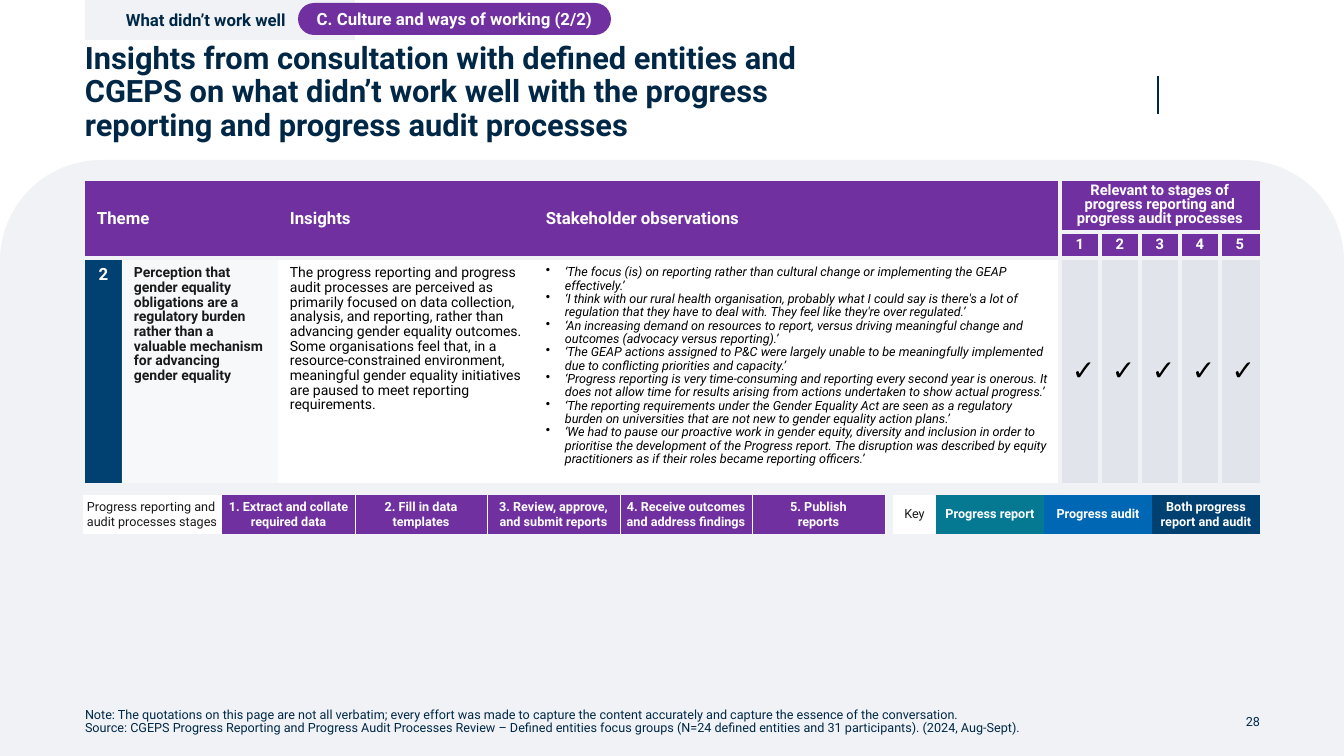
from lxml import etree
from pptx import Presentation
from pptx.dml.color import RGBColor
from pptx.enum.shapes import MSO_CONNECTOR, MSO_SHAPE
from pptx.enum.text import MSO_ANCHOR, PP_ALIGN
from pptx.oxml.ns import qn
from pptx.util import Pt

SCALE = 914400 / 100.8
LEFT, CENTER, RIGHT = PP_ALIGN.LEFT, PP_ALIGN.CENTER, PP_ALIGN.RIGHT
TOP, MIDDLE = MSO_ANCHOR.TOP, MSO_ANCHOR.MIDDLE
RECTANGLE, PILL = MSO_SHAPE.RECTANGLE, MSO_SHAPE.ROUNDED_RECTANGLE
ROUND_TOP = MSO_SHAPE.ROUND_2_SAME_RECTANGLE
STRAIGHT = MSO_CONNECTOR.STRAIGHT

WHITE = RGBColor(0xFF, 0xFF, 0xFF)
BLACK = RGBColor(0x00, 0x00, 0x00)
INK = RGBColor(0x1A, 0x1A, 0x1A)
NAVY = RGBColor(0x00, 0x28, 0x46)
DEEP_BLUE = RGBColor(0x00, 0x41, 0x72)
BLUE = RGBColor(0x00, 0x67, 0xB4)
TEAL = RGBColor(0x05, 0x79, 0x92)
PURPLE = RGBColor(0x70, 0x30, 0xA0)
PALE = RGBColor(0xF0, 0xF2, 0xF5)
GREY = RGBColor(0xE1, 0xE5, 0xEB)
PLAIN_TABLE = "{2D5ABB26-0587-4C30-8999-92F81FD0307C}"

THEME = ("Perception that gender equality obligations are a regulatory burden "
         "rather than a valuable mechanism for advancing gender equality")
INSIGHT = (
    "The progress reporting and progress audit processes are perceived as primarily focused on "
    "data collection, analysis, and reporting, rather than advancing gender equality outcomes. "
    "Some organisations feel that, in a resource-constrained environment, meaningful gender "
    "equality initiatives are paused to meet reporting requirements.")
OBSERVATIONS = [
    "‘The focus (is) on reporting rather than cultural change or implementing the GEAP effectively.’",
    "‘I think with our rural health organisation, probably what I could say is there's a lot of "
    "regulation that they have to deal with. They feel like they're over regulated.’",
    "‘An increasing demand on resources to report, versus driving meaningful change and outcomes "
    "(advocacy versus reporting).’",
    "‘The GEAP actions assigned to P&C were largely unable to be meaningfully implemented due to "
    "conflicting priorities and capacity.’",
    "‘Progress reporting is very time-consuming and reporting every second year is onerous. It does "
    "not allow time for results arising from actions undertaken to show actual progress.’",
    "‘The reporting requirements under the Gender Equality Act are seen as a regulatory burden on "
    "universities that are not new to gender equality action plans.’",
    "‘We had to pause our proactive work in gender equity, diversity and inclusion in order to "
    "prioritise the development of the Progress report. The disruption was described by equity "
    "practitioners as if their roles became reporting officers.’",
]
STAGES = [["1. Extract and collate required data"], ["2. Fill in data", "templates"],
          ["3. Review, approve, and submit reports"],
          ["4. Receive outcomes and address findings"], ["5. Publish", "reports"]]
KEY = [("Progress report", TEAL), ("Progress audit", BLUE),
       ("Both progress report and audit", DEEP_BLUE)]
NOTES = [
    "Note: The quotations on this page are not all verbatim; every effort was made to capture the "
    "content accurately and capture the essence of the conversation.",
    "Source: CGEPS Progress Reporting and Progress Audit Processes Review – Defined entities focus "
    "groups (N=24 defined entities and 31 participants). (2024, Aug-Sept).",
]


def px(value):
    return round(value * SCALE)


def apply(target, values):
    for name, value in values.items():
        setattr(target, name, value)


def insets(side, end):
    return dict(margin_left=px(side), margin_right=px(side),
                margin_top=px(end), margin_bottom=px(end))


def write(frame, lines, size, color, bold=False, italic=False, align=LEFT,
          spacing=1.0, indent=0, bullet=False):
    for index, line in enumerate(lines):
        para = frame.paragraphs[0] if index == 0 else frame.add_paragraph()
        apply(para, dict(alignment=align, line_spacing=spacing, space_before=Pt(0)))
        if indent:
            properties = para._p.get_or_add_pPr()
            properties.set("marL", str(px(indent)))
            if bullet:
                properties.set("indent", str(-px(indent)))
                etree.SubElement(properties, qn("a:buChar")).set("char", "•")
        span = para.add_run()
        span.text = line
        apply(span.font, dict(name="Roboto", size=Pt(size), bold=bold, italic=italic))
        span.font.color.rgb = color


def add_text(page, box, lines, **style):
    frame = page.shapes.add_textbox(*map(px, box)).text_frame
    apply(frame, dict(word_wrap=True, vertical_anchor=MIDDLE, **insets(0, 0)))
    write(frame, lines, **style)


def add_panel(page, kind, box, fill):
    panel = page.shapes.add_shape(kind, *map(px, box))
    panel.shadow.inherit = False
    panel.fill.solid()
    panel.fill.fore_color.rgb = fill
    panel.line.fill.background()
    apply(panel.text_frame, dict(word_wrap=True, vertical_anchor=MIDDLE))
    return panel


def add_grid(page, left, top, widths, heights):
    frame = page.shapes.add_table(len(heights), len(widths), px(left), px(top),
                                  px(sum(widths)), px(sum(heights)))
    table = frame.table
    apply(table, dict(first_row=False, horz_banding=False))
    table._tbl.tblPr.find(qn("a:tableStyleId")).text = PLAIN_TABLE
    for column, width in zip(table.columns, widths):
        column.width = px(width)
    for row, height in zip(table.rows, heights):
        row.height = px(height)
    return table


def fill_cell(cell, lines, fill, margins, borders="", border=(PALE, 3), anchor=MIDDLE,
              alpha=None, **style):
    apply(cell, dict(vertical_anchor=anchor, **insets(*margins)))
    color, width = border
    properties = cell._tc.get_or_add_tcPr()
    for side in "LRTB":
        if side in borders:
            line = etree.SubElement(properties, qn(f"a:ln{side}"), w=str(Pt(width)))
            solid = etree.SubElement(line, qn("a:solidFill"))
            etree.SubElement(solid, qn("a:srgbClr"), val=str(color))
    cell.fill.solid()
    cell.fill.fore_color.rgb = fill
    if alpha:
        tint = properties.find(qn("a:solidFill")).find(qn("a:srgbClr"))
        etree.SubElement(tint, qn("a:alpha"), val=str(alpha * 1000))
    write(cell.text_frame, lines, **style)


def add_backdrop(page, width, height):
    panel = add_panel(page, ROUND_TOP, (0, 160, width, height - 160), PALE)
    panel.adjustments[0] = 0.17
    divider = page.shapes.add_connector(STRAIGHT, px(1158), px(76), px(1158), px(114))
    divider.line.color.rgb = NAVY
    divider.line.width = Pt(1.5)
    etree.SubElement(divider._element.spPr, qn("a:effectLst"))


def add_heading(page, left, top):
    add_text(page, (left, top + 49, 793, 88),
             ["Insights from consultation with defined entities and CGEPS on what didn’t work "
              "well with the progress reporting and progress audit processes"],
             size=22, color=NAVY, bold=True, spacing=0.9)
    tab = add_panel(page, RECTANGLE, (left, top, 270, 40), PALE)
    write(tab.text_frame, ["What didn’t work well"], size=12, color=NAVY, bold=True, indent=31)
    pill = add_panel(page, PILL, (left + 213, top + 3, 313, 32), PURPLE)
    pill.adjustments[0] = 0.5
    write(pill.text_frame, ["C. Culture and ways of working (2/2)"], size=12, color=WHITE,
          bold=True, align=CENTER)


def add_insights(page, left, top):
    table = add_grid(page, left, top, [37, 156, 256, 526] + [40] * 5, [51, 25, 227])
    header = dict(fill=PURPLE, margins=(12, 4), color=WHITE, bold=True)
    for column, last, label, borders in ((0, 1, "Theme", "B"), (2, 2, "Insights", "B"),
                                         (3, 3, "Stakeholder observations", "RB")):
        table.cell(0, column).merge(table.cell(1, last))
        fill_cell(table.cell(0, column), [label], borders=borders, size=12, spacing=0.9, **header)
    table.cell(0, 4).merge(table.cell(0, 8))
    fill_cell(table.cell(0, 4),
              ["Relevant to stages of progress reporting and progress audit processes"],
              borders="LB", size=10.5, align=CENTER, spacing=Pt(10), **header)

    body = dict(margins=(12, 8), spacing=0.9)
    upper = dict(anchor=TOP, borders="TB", **body)
    fill_cell(table.cell(2, 0), ["2"], DEEP_BLUE, size=12, color=WHITE, bold=True,
              align=CENTER, **upper)
    fill_cell(table.cell(2, 1), [THEME], WHITE, alpha=50, size=10, color=INK, bold=True, **upper)
    fill_cell(table.cell(2, 2), [INSIGHT], WHITE, size=10, color=BLACK, **upper)
    fill_cell(table.cell(2, 3), OBSERVATIONS, WHITE, size=9, color=BLACK, italic=True,
              indent=19, bullet=True, **{**upper, "borders": "RTB"})
    for stage in range(1, 6):
        borders = "LTB" if stage == 5 else "LRTB"
        fill_cell(table.cell(1, 3 + stage), [str(stage)], borders=borders, size=10.5,
                  align=CENTER, spacing=0.9, **header)
        fill_cell(table.cell(2, 3 + stage), ["✓"], GREY, borders=borders, size=20,
                  color=BLACK, italic=True, align=CENTER, **body)


def add_legends(page, left, top):
    plain = dict(fill=WHITE, margins=(4, 4), size=9, color=INK)
    strong = dict(margins=(4, 4), size=9, color=WHITE, bold=True, align=CENTER)
    key = add_grid(page, left + 810, top, [43] + [108] * 3, [39])
    fill_cell(key.cell(0, 0), ["Key"], align=CENTER, **plain)
    for column, (label, fill) in enumerate(KEY, 1):
        fill_cell(key.cell(0, column), [label], fill, **strong)
    stages = add_grid(page, left, top, [139, 133, 132, 133, 132, 133], [39])
    fill_cell(stages.cell(0, 0), ["Progress reporting and audit processes stages"], **plain)
    for column, lines in enumerate(STAGES, 1):
        fill_cell(stages.cell(0, column), lines, PURPLE, borders="R" if column == 1 else "LR",
                  border=(WHITE, 0.5), **strong)


def add_footer(page, left, top):
    add_text(page, (left, top, 1072, 28), NOTES, size=9, color=NAVY, spacing=0.9)
    add_text(page, (left + 1095, top, 80, 28), ["28"], size=9, color=NAVY, align=RIGHT)


def main():
    deck = Presentation()
    apply(deck, dict(slide_width=px(1344), slide_height=px(756)))
    page = deck.slides.add_slide(deck.slide_layouts[6])
    add_backdrop(page, 1344, 756)
    add_heading(page, 85, 0)
    add_insights(page, 85, 181)
    add_legends(page, 83, 495)
    add_footer(page, 85, 708)
    deck.save("out.pptx")


if __name__ == "__main__":
    main()
